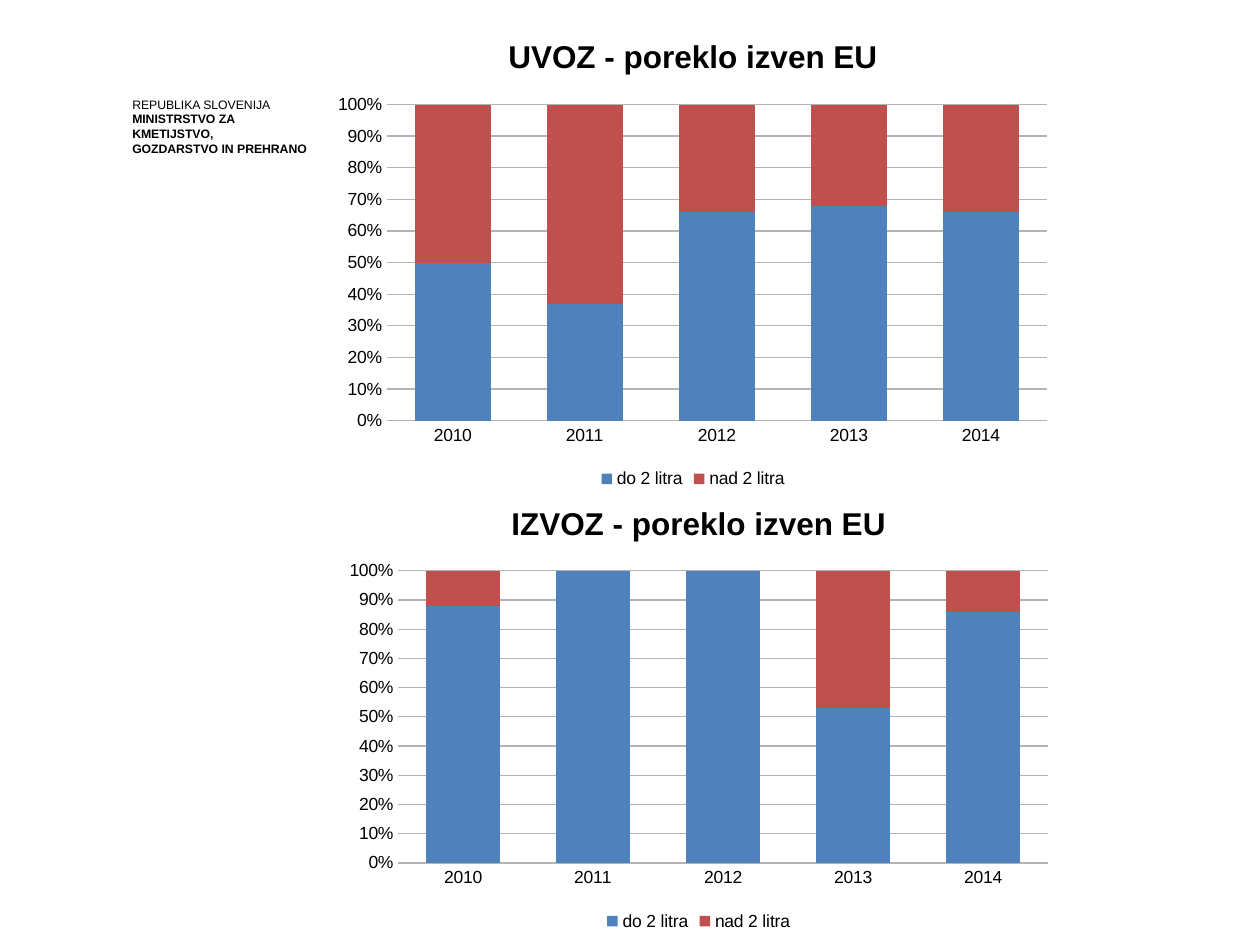
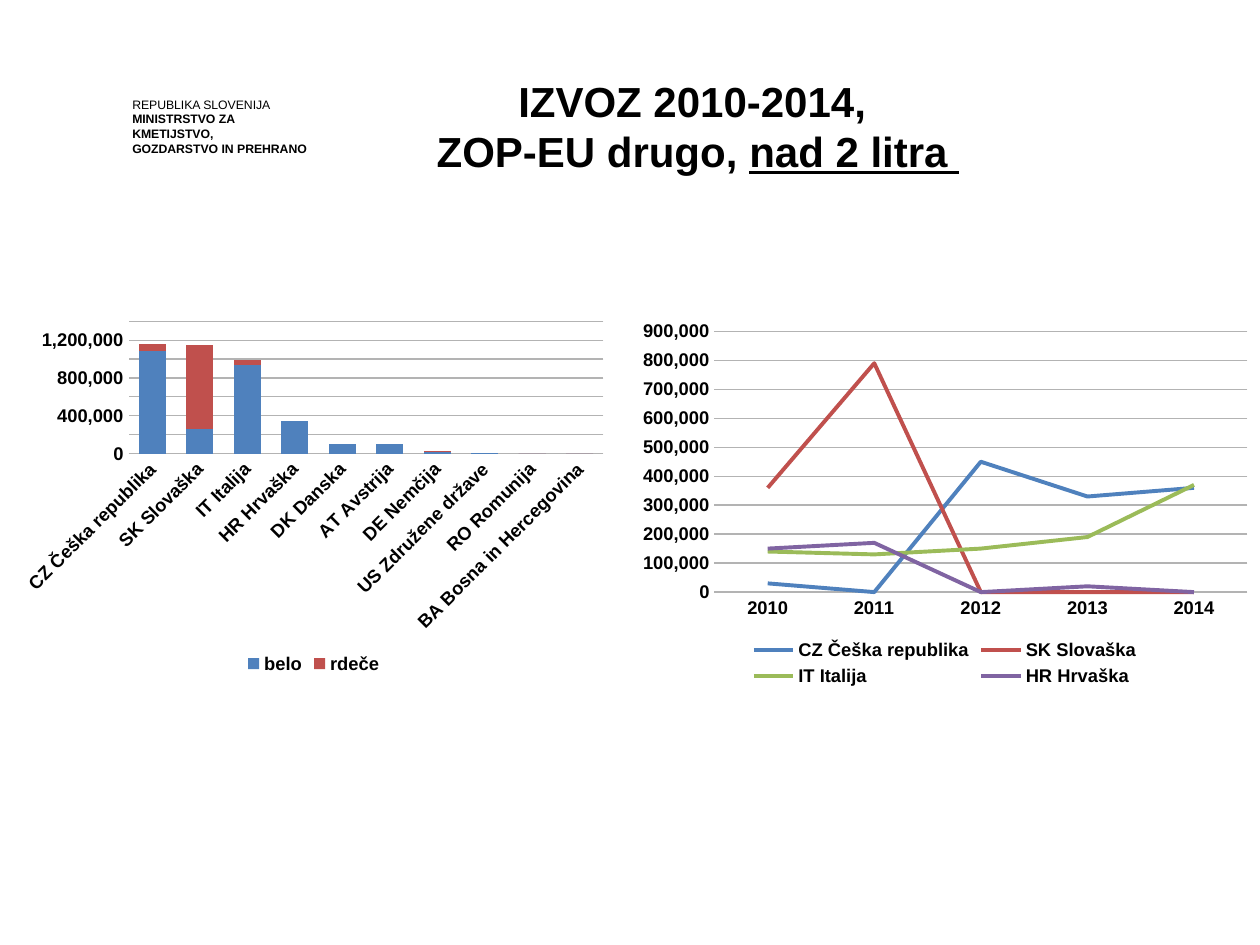
from dataclasses import dataclass

from lxml import etree
from pptx import Presentation
from pptx.chart.chart import Chart
from pptx.chart.data import CategoryChartData
from pptx.dml.color import RGBColor
from pptx.enum.chart import XL_CHART_TYPE, XL_LEGEND_POSITION, XL_TICK_MARK
from pptx.enum.text import MSO_AUTO_SIZE, PP_ALIGN
from pptx.oxml.ns import qn
from pptx.slide import Slide
from pptx.text.text import TextFrame, _Paragraph as Paragraph
from pptx.util import Pt

PX = 9144  # 100 px to the inch
SLIDE_WIDTH, SLIDE_HEIGHT = 1000, 750
FONT = "Arial"
COLORS = {
    "text": "000000",
    "grid": "B3B3B3",
    "blue": "4F81BD",
    "red": "C0504D",
    "green": "9BBB59",
    "purple": "8064A2",
}
SERIES_COLORS = ("blue", "red", "green", "purple")

STACKED = XL_CHART_TYPE.COLUMN_STACKED
STACKED_100 = XL_CHART_TYPE.COLUMN_STACKED_100
LINE = XL_CHART_TYPE.LINE
LEGEND_BOTTOM = XL_LEGEND_POSITION.BOTTOM
NO_TICK = XL_TICK_MARK.NONE
CENTER = PP_ALIGN.CENTER
FIT_SHAPE = MSO_AUTO_SIZE.SHAPE_TO_FIT_TEXT

YEARS = ("2010", "2011", "2012", "2013", "2014")
COUNTRIES = (
    "CZ Češka republika", "SK Slovaška", "IT Italija", "HR Hrvaška", "DK Danska",
    "AT Avstrija", "DE Nemčija", "US Združene države", "RO Romunija",
    "BA Bosna in Hercegovina",
)


@dataclass(frozen=True)
class Box:
    left: int
    top: int
    width: int
    height: int

    def emu(self) -> tuple[int, int, int, int]:
        return self.left * PX, self.top * PX, self.width * PX, self.height * PX


@dataclass(frozen=True)
class ChartSpec:
    kind: XL_CHART_TYPE
    frame: Box
    plot: Box
    categories: tuple[str, ...]
    series: dict[str, tuple[int, ...]]
    size: float = 10.5
    bold: bool = True
    title: str = ""
    number_format: str = "#,##0"
    maximum: int | None = None
    unit: int | None = None
    label_rotation: int = 0


def share_chart(title: str, frame: Box, plot: Box, up_to_two_litres: tuple[int, ...]) -> ChartSpec:
    """Describe a 100 % chart of small and large packages by year."""
    series = {
        "do 2 litra": up_to_two_litres,
        "nad 2 litra": tuple(100 - share for share in up_to_two_litres),
    }
    return ChartSpec(STACKED_100, frame, plot, YEARS, series, 10, False, title, "0%")


SHARE_CHARTS = (
    share_chart("UVOZ - poreklo izven EU", Box(257, 11, 586, 381),
                Box(307, 83, 524, 251), (50, 37, 66, 68, 66)),
    share_chart("IZVOZ - poreklo izven EU", Box(266, 382, 577, 361),
                Box(316, 453, 516, 232), (88, 100, 100, 53, 86)),
)
EXPORT_CHARTS = (
    ChartSpec(
        STACKED, Box(9, 249, 480, 290), Box(102, 255, 377, 105), COUNTRIES,
        {
            "belo": (1090000, 260000, 940000, 340000, 100000, 100000, 20000, 10000, 0, 0),
            "rdeče": (70000, 890000, 50000, 0, 0, 0, 10000, 0, 0, 0),
        },
        maximum=1400000, unit=200000, label_rotation=-45,
    ),
    ChartSpec(
        LINE, Box(500, 249, 500, 300), Box(567, 263, 423, 207), YEARS,
        dict(zip(COUNTRIES, (
            (30000, 0, 450000, 330000, 360000),
            (360000, 790000, 0, 0, 0),
            (140000, 130000, 150000, 190000, 370000),
            (150000, 170000, 0, 20000, 0),
        ))),
        maximum=900000, unit=100000,
    ),
)


def color(name: str) -> RGBColor:
    return RGBColor.from_string(COLORS[name])


def style_font(font, size: float, bold: bool) -> None:
    font.name = FONT
    font.size = Pt(size)
    font.bold = bold
    font.color.rgb = color("text")


def add_run(paragraph: Paragraph, text: str, size: float, bold: bool, underline: bool = False) -> None:
    run = paragraph.add_run()
    run.text = text
    style_font(run.font, size, bold)
    if underline:
        run.font.underline = True


def add_text_frame(slide: Slide, box: Box, wrap: bool) -> TextFrame:
    frame = slide.shapes.add_textbox(*box.emu()).text_frame
    frame.word_wrap = wrap
    frame.auto_size = FIT_SHAPE
    return frame


def next_paragraph(frame: TextFrame, index: int) -> Paragraph:
    return frame.add_paragraph() if index else frame.paragraphs[0]


def add_ministry_header(slide: Slide) -> None:
    frame = add_text_frame(slide, Box(105, 77, 147, 34), True)
    frame.margin_left = frame.margin_right = frame.margin_top = frame.margin_bottom = 0
    lines = ("REPUBLIKA SLOVENIJA", "MINISTRSTVO ZA KMETIJSTVO,", "GOZDARSTVO IN PREHRANO")
    for index, line in enumerate(lines):
        paragraph = next_paragraph(frame, index)
        paragraph.line_spacing = Pt(8.4)
        add_run(paragraph, line, 7, index > 0)


def add_export_title(slide: Slide) -> None:
    frame = add_text_frame(slide, Box(335, 55, 438, 91), False)
    lines = (
        (("IZVOZ 2010-2014, ", False),),
        (("ZOP-EU drugo, ", False), ("nad 2 litra ", True)),
    )
    for index, line in enumerate(lines):
        paragraph = next_paragraph(frame, index)
        paragraph.alignment = CENTER
        for text, underline in line:
            add_run(paragraph, text, 24, True, underline)


def place_plot(chart: Chart, frame: Box, plot: Box) -> None:
    """Fix the inner plot area as fractions of the chart frame."""
    area = chart.element.find(f".//{qn('c:plotArea')}")
    for old_layout in area.findall(qn("c:layout")):
        area.remove(old_layout)
    layout = etree.Element(qn("c:layout"))
    area.insert(0, layout)
    manual = etree.SubElement(layout, qn("c:manualLayout"))
    settings = {
        "layoutTarget": "inner",
        "xMode": "edge",
        "yMode": "edge",
        "x": (plot.left - frame.left) / frame.width,
        "y": (plot.top - frame.top) / frame.height,
        "w": plot.width / frame.width,
        "h": plot.height / frame.height,
    }
    for name, value in settings.items():
        etree.SubElement(manual, qn(f"c:{name}"), val=str(value))


def style_axes(chart: Chart, spec: ChartSpec) -> None:
    for axis in (chart.category_axis, chart.value_axis):
        axis.major_tick_mark = axis.minor_tick_mark = NO_TICK
        style_font(axis.tick_labels.font, spec.size, spec.bold)
    chart.category_axis.format.line.color.rgb = color("grid")
    if spec.label_rotation:
        body = chart.element.find(f".//{qn('c:catAx')}/{qn('c:txPr')}/{qn('a:bodyPr')}")
        body.set("rot", str(spec.label_rotation * 60000))

    values = chart.value_axis
    values.format.line.fill.background()
    values.has_major_gridlines = True
    values.major_gridlines.format.line.color.rgb = color("grid")
    values.tick_labels.number_format = spec.number_format
    values.tick_labels.number_format_is_linked = False
    if spec.maximum:
        values.minimum_scale = 0
        values.maximum_scale = spec.maximum
        values.major_unit = spec.unit


def style_series(chart: Chart, kind: XL_CHART_TYPE) -> None:
    plot = chart.plots[0]
    plot.vary_by_categories = False
    if kind != LINE:
        plot.gap_width = 75
        plot.overlap = 100
    for series, name in zip(plot.series, SERIES_COLORS):
        if kind == LINE:
            series.smooth = False
            series.format.line.width = Pt(2.25)
            series.format.line.color.rgb = color(name)
        else:
            series.format.fill.solid()
            series.format.fill.fore_color.rgb = color(name)


def add_chart(slide: Slide, spec: ChartSpec) -> None:
    data = CategoryChartData(number_format="#,##0")
    data.categories = spec.categories
    for name, values in spec.series.items():
        data.add_series(name, values)
    chart = slide.shapes.add_chart(spec.kind, *spec.frame.emu(), data).chart
    style_font(chart.font, spec.size, spec.bold)

    chart.has_title = bool(spec.title)
    if spec.title:
        add_run(chart.chart_title.text_frame.paragraphs[0], spec.title, 18, True)
        chart.chart_title.include_in_layout = False
    chart.has_legend = True
    chart.legend.position = LEGEND_BOTTOM
    chart.legend.include_in_layout = False
    style_font(chart.legend.font, spec.size, spec.bold)

    style_axes(chart, spec)
    style_series(chart, spec.kind)
    place_plot(chart, spec.frame, spec.plot)


def add_slide(presentation: Presentation, charts: tuple[ChartSpec, ...]) -> Slide:
    slide = presentation.slides.add_slide(presentation.slide_layouts[6])
    add_ministry_header(slide)
    for spec in charts:
        add_chart(slide, spec)
    return slide


def main() -> None:
    presentation = Presentation()
    presentation.slide_width = SLIDE_WIDTH * PX
    presentation.slide_height = SLIDE_HEIGHT * PX
    add_slide(presentation, SHARE_CHARTS)
    export_slide = add_slide(presentation, EXPORT_CHARTS)
    add_export_title(export_slide)
    presentation.save("out.pptx")


if __name__ == "__main__":
    main()
